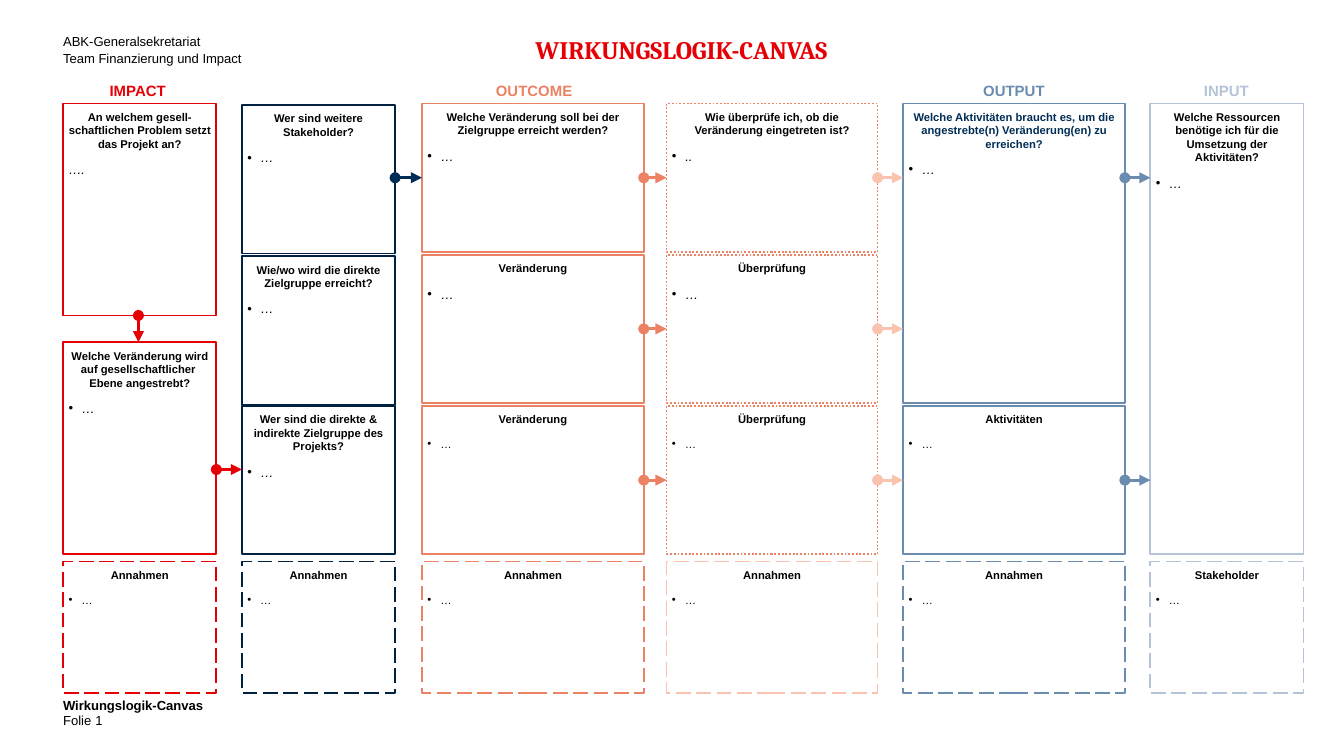
"""Build a one-slide impact logic canvas."""
from copy import deepcopy
from typing import NamedTuple, Optional

from lxml import etree
from pptx import Presentation
from pptx.dml.color import RGBColor
from pptx.enum.dml import MSO_LINE
from pptx.enum.shapes import MSO_CONNECTOR, MSO_SHAPE
from pptx.enum.text import MSO_ANCHOR, PP_ALIGN
from pptx.oxml.ns import qn
from pptx.util import Inches, Pt

RED = RGBColor(0xE6, 0x00, 0x05)
NAVY = RGBColor(0x00, 0x21, 0x3F)
BLUE = RGBColor(0x00, 0x2D, 0x55)
CORAL = RGBColor(0xEB, 0x82, 0x64)
PEACH = RGBColor(0xFA, 0xC3, 0xAF)
STEEL = RGBColor(0x69, 0x8C, 0xAF)
MIST = RGBColor(0xB4, 0xC3, 0xD7)
BLACK = RGBColor(0, 0, 0)

SOLID, DASH, DOT = MSO_LINE.SOLID, MSO_LINE.LONG_DASH, MSO_LINE.ROUND_DOT
RECT, LINE = MSO_SHAPE.RECTANGLE, MSO_CONNECTOR.STRAIGHT
LEFT, CENTER = PP_ALIGN.LEFT, PP_ALIGN.CENTER
TOP, MIDDLE, BOTTOM = MSO_ANCHOR.TOP, MSO_ANCHOR.MIDDLE, MSO_ANCHOR.BOTTOM

WIDE = 10
HIGH = WIDE * 9 / 16
COLS = [(0.47, 1.14), (1.8, 1.14), (3.14, 1.65), (4.96, 1.57), (6.72, 1.65), (8.56, 1.14)]
START, GAP = 0.77, 0.02
PITCH = HIGH / 5
FOOT, LOW = 3.03, 0.89
HALF = 1.42

HEAD = {"name": "Arial", "size": Pt(6), "bold": True}
BODY = {"name": "Arial", "size": Pt(7), "italic": True}
SMALL = {**BODY, "size": Pt(6)}
PLAIN = {"name": "Arial", "size": Pt(7)}
STRONG = {**PLAIN, "bold": True}
LABEL = {"name": "Arial", "size": Pt(8), "bold": True}
TITLE = {"name": "Cambria", "size": Pt(13.5), "bold": True}


class Card(NamedTuple):
    """A framed field on the grid."""
    col: int
    row: float
    span: float
    color: RGBColor
    head: str
    form: dict = BODY
    dash: MSO_LINE = SOLID
    body: str = "…"
    bullet: bool = True
    ink: RGBColor = BLACK


class Note(NamedTuple):
    """A free text with its place in inches."""
    box: tuple
    text: str
    form: dict = PLAIN
    color: RGBColor = BLACK
    align: PP_ALIGN = LEFT
    anchor: MSO_ANCHOR = TOP
    space: Optional[Pt] = Pt(9)


class Arrow(NamedTuple):
    """An arrow from the right edge of a column to the next column."""
    col: int
    row: float
    color: RGBColor


CARDS = [
    Card(0, 0, HALF, RED, "An welchem gesell-schaftlichen Problem setzt das Projekt an?",
         body="….", bullet=False),
    Card(0, 3 - HALF, HALF, RED,
         "Welche Veränderung wird auf gesellschaftlicher \nEbene angestrebt?"),
    Card(1, 0.01, 1, NAVY, "Wer sind weitere Stakeholder?"),
    Card(1, 1.01, 1, NAVY, "Wie/wo wird die direkte Zielgruppe erreicht?"),
    Card(1, 2, 1, NAVY, "Wer sind die direkte & indirekte Zielgruppe des Projekts?"),
    Card(2, 0, 1, CORAL, "Welche Veränderung soll bei der Zielgruppe erreicht werden?"),
    Card(2, 1, 1, CORAL, "Veränderung"),
    Card(2, 2, 1, CORAL, "Veränderung", SMALL),
    Card(3, 0, 1, CORAL, "Wie überprüfe ich, ob die Veränderung eingetreten ist?",
         dash=DOT, body=".."),
    Card(3, 1, 1, CORAL, "Überprüfung", dash=DOT),
    Card(3, 2, 1, CORAL, "Überprüfung", SMALL, DOT),
    Card(4, 0, 2, STEEL, "Welche Aktivitäten braucht es, um die angestrebte(n) "
         "Veränderung(en) zu erreichen?", ink=BLUE),
    Card(4, 2, 1, STEEL, "Aktivitäten", SMALL),
    Card(5, 0, 3, MIST, "Welche Ressourcen benötige ich für die Umsetzung der Aktivitäten?"),
] + [
    Card(col, FOOT, LOW, color, "Stakeholder" if col == 5 else "Annahmen", SMALL, DASH)
    for col, color in enumerate([RED, NAVY, CORAL, PEACH, STEEL, MIST])
]

ARROWS = [Arrow(0, 1.93, RED), Arrow(1, 0, BLUE), Arrow(4, 0, STEEL), Arrow(4, 2, STEEL)] + [
    Arrow(col, row, color) for col, color in ((2, CORAL), (3, PEACH)) for row in range(3)
]

NOTES = [
    Note((0.47, 0.24, 1.79, 0.25), "ABK-Generalsekretariat\nTeam Finanzierung und Impact"),
    Note((0.47, 5.18, 9.06, 0.09), "Wirkungslogik-Canvas", STRONG),
    Note((0.47, 5.29, 0.3, 0.13), "Folie", anchor=BOTTOM),
    Note((0.71, 5.3, 2.25, 0.12), "1", anchor=BOTTOM),
    Note((2.06, 0.25, 6.02, 0.24), "WIRKUNGSLOGIK-CANVAS", TITLE, RED, CENTER, MIDDLE, None),
] + [
    Note((left, 0.61, 1.07, 0.12), text, LABEL, color, CENTER, MIDDLE, None)
    for left, text, color in ((0.49, "IMPACT", RED), (3.44, "OUTCOME", CORAL),
                              (7.01, "OUTPUT", STEEL), (8.59, "INPUT", MIST))
]


def row_top(row: float) -> float:
    """Return the top of a grid row in inches."""
    return START + row * PITCH


def style(item, values: dict) -> None:
    """Set each named attribute on an object."""
    for name, value in values.items():
        setattr(item, name, value)


def write(para, text: str, form: dict, color: RGBColor) -> None:
    """Add formatted runs to a paragraph, with a break between lines."""
    for count, part in enumerate(text.split("\n")):
        if count:
            para.add_line_break()
            para._p[-1].append(deepcopy(para.runs[0]._r.rPr))
        run = para.add_run()
        run.text = part
        style(run.font, form)
        run.font.color.rgb = color


def set_frame(frame, side: float, edge: float, anchor: MSO_ANCHOR) -> None:
    """Set wrap, margins and anchor of a text frame."""
    style(frame, {"word_wrap": True, "vertical_anchor": anchor,
                  "margin_left": Inches(side), "margin_right": Inches(side),
                  "margin_top": Inches(edge), "margin_bottom": Inches(edge)})


def draw_card(slide, card: Card) -> None:
    """Draw a framed field with heading and entry."""
    left, width = COLS[card.col]
    box = (left, row_top(card.row), width, card.span * PITCH - GAP)
    shape = slide.shapes.add_shape(RECT, *map(Inches, box))
    shape.shadow.inherit = False
    shape.fill.background()
    shape.line.color.rgb = card.color
    style(shape.line, {"width": Pt(1), "dash_style": card.dash})
    frame = shape.text_frame
    set_frame(frame, 0.04, 0.05, TOP)
    head, body = frame.paragraphs[0], frame.add_paragraph()
    style(head, {"alignment": CENTER, "space_after": Pt(6)})
    style(body, {"alignment": LEFT, "space_after": Pt(6)})
    if card.bullet:
        props = body._p.get_or_add_pPr()
        for name, value in {"marL": 0.1, "indent": -0.1}.items():
            props.set(name, str(Inches(value)))
        etree.SubElement(props, qn("a:buFont")).set("typeface", "Arial")
        etree.SubElement(props, qn("a:buChar")).set("char", "•")
    write(head, card.head, HEAD, card.ink)
    write(body, card.body, card.form, BLACK)


def draw_note(slide, note: Note) -> None:
    """Draw a free text, one paragraph per line."""
    frame = slide.shapes.add_textbox(*map(Inches, note.box)).text_frame
    set_frame(frame, 0, 0, note.anchor)
    for count, text in enumerate(note.text.split("\n")):
        para = frame.add_paragraph() if count else frame.paragraphs[0]
        style(para, {"alignment": note.align, "line_spacing": note.space})
        write(para, text, note.form, note.color)


def draw_line(slide, ends: tuple, color: RGBColor) -> None:
    """Draw an arrow with a round start."""
    line = slide.shapes.add_connector(LINE, *map(Inches, ends))
    line.line.color.rgb = color
    line.line.width = Pt(1.5)
    props = line._element.spPr
    outline = props.find(qn("a:ln"))
    for tag, kind in (("a:headEnd", "oval"), ("a:tailEnd", "triangle")):
        etree.SubElement(outline, qn(tag)).set("type", kind)
    etree.SubElement(props, qn("a:effectLst"))


def draw_arrow(slide, arrow: Arrow) -> None:
    """Draw an arrow across the gap after a column."""
    left, width = COLS[arrow.col]
    high = row_top(arrow.row) + (PITCH - GAP) / 2
    draw_line(slide, (left + width, high, COLS[arrow.col + 1][0], high), arrow.color)


def main() -> None:
    """Build and save the slide."""
    deck = Presentation()
    style(deck, {"slide_width": Inches(WIDE), "slide_height": Inches(HIGH)})
    slide = deck.slides.add_slide(deck.slide_layouts[6])
    for draw, items in ((draw_card, CARDS), (draw_arrow, ARROWS), (draw_note, NOTES)):
        for item in items:
            draw(slide, item)
    draw_line(slide, (1.03, row_top(HALF) - GAP, 1.03, row_top(3 - HALF)), RED)
    deck.save("out.pptx")


if __name__ == "__main__":
    main()
